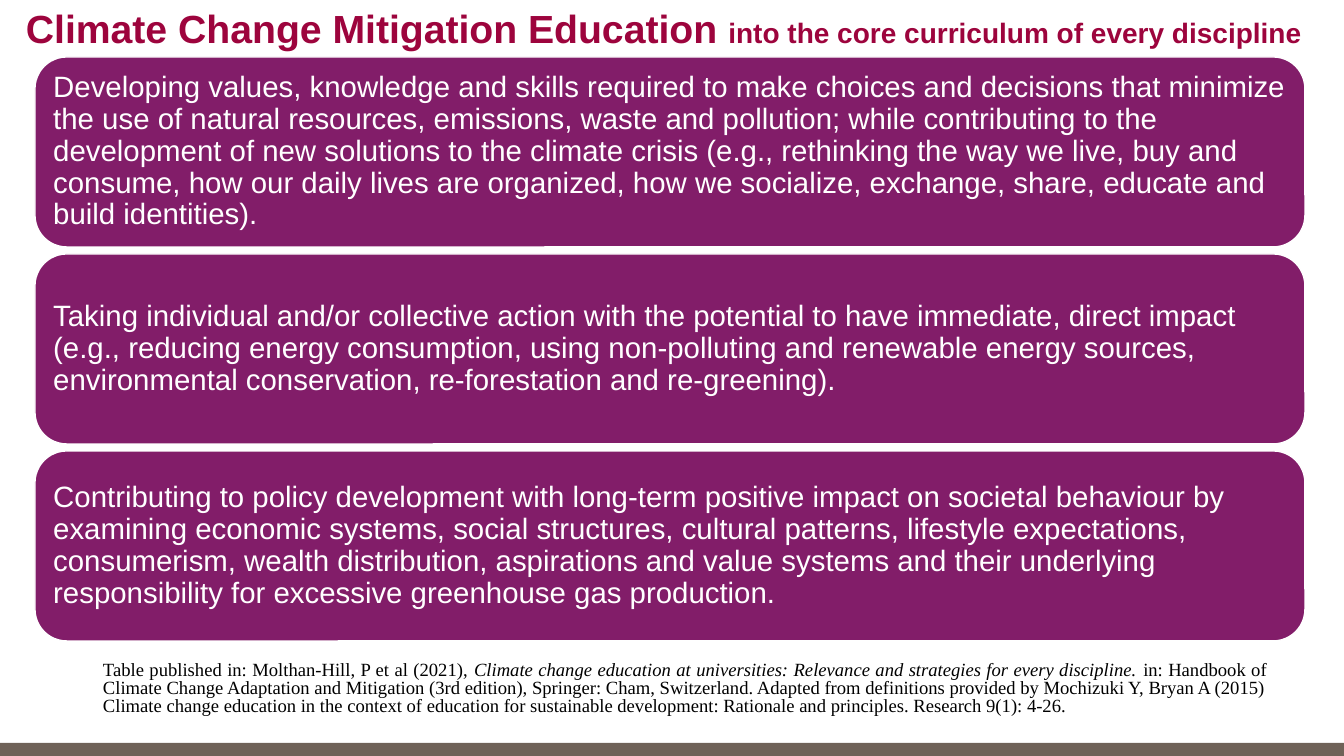
import pptx
import pptx.util
import pptx.dml.color
import pptx.enum.shapes
import pptx.enum.text

RGBColor = pptx.dml.color.RGBColor
ALIGN = pptx.enum.text.PP_ALIGN
ANCHOR = pptx.enum.text.MSO_ANCHOR
SHAPE = pptx.enum.shapes.MSO_SHAPE

CRIMSON = RGBColor(0x9D, 0x04, 0x3D)
PLUM = RGBColor(0x82, 0x1D, 0x69)
BROWN = RGBColor(0x6F, 0x62, 0x58)
WHITE = RGBColor(0xFF, 0xFF, 0xFF)
BLACK = RGBColor(0x00, 0x00, 0x00)

# Content: title runs are (text, size), citation runs are (text, italic)
TITLE = [
    ("Climate Change Mitigation Education ", 28),
    ("into the core curriculum of every discipline", 20),
]
DEFINITIONS = [
    "Developing values, knowledge and skills required to make choices and decisions that "
    "minimize the use of natural resources, emissions, waste and pollution; while contributing "
    "to the development of new solutions to the climate crisis (e.g., rethinking the way we "
    "live, buy and consume, how our daily lives are organized, how we socialize, exchange, "
    "share, educate and build identities).",
    "Taking individual and/or collective action with the potential to have immediate, direct "
    "impact (e.g., reducing energy consumption, using non-polluting and renewable energy "
    "sources, environmental conservation, re-forestation and re-greening).",
    "Contributing to policy development with long-term positive impact on societal behaviour "
    "by examining economic systems, social structures, cultural patterns, lifestyle "
    "expectations, consumerism, wealth distribution, aspirations and value systems and their "
    "underlying responsibility for excessive greenhouse gas production.",
]
CITATION = [
    ("Table published in: Molthan-Hill, P et al (2021), ", False),
    ("Climate change education at universities: Relevance and strategies for every "
     "discipline.", True),
    (" in: Handbook of Climate Change Adaptation and Mitigation (3rd edition), Springer: Cham, "
     "Switzerland. Adapted from definitions provided by Mochizuki Y, Bryan A (2015) Climate "
     "change education in the context of education for sustainable development: Rationale and "
     "principles. Research 9(1): 4-26.", False),
]

# Layout in px
SLIDE_WIDTH, SLIDE_HEIGHT = 1344, 756
CARD_LEFT, CARD_TOP, CARD_WIDTH, CARD_HEIGHT, CARD_GAP = 35, 57, 1270, 190, 7
CARD_MARGIN = 9
BAR_HEIGHT = 13


def px(length):
    return pptx.util.Emu(round(length * 914400 / 100.8))


def box(*lengths):
    return [px(length) for length in lengths]


def set_margins(frame, margin):
    frame.margin_left = frame.margin_right = px(margin)
    frame.margin_top = frame.margin_bottom = px(margin)


def format_run(run, name, size, color, bold=False, italic=False):
    run.font.name = name
    run.font.size = pptx.util.Pt(size)
    run.font.color.rgb = color
    run.font.bold = bold
    run.font.italic = italic


def add_filled_shape(slide, kind, bounds, color):
    shape = slide.shapes.add_shape(kind, *box(*bounds))
    shape.shadow.inherit = False
    shape.fill.solid()
    shape.fill.fore_color.rgb = color
    shape.line.fill.background()
    return shape


def add_title(slide):
    title = slide.shapes.title
    title.left, title.top, title.width, title.height = box(-15, -1, 1358, 57)
    frame = title.text_frame
    frame.auto_size = pptx.enum.text.MSO_AUTO_SIZE.NONE
    frame.vertical_anchor = ANCHOR.TOP
    paragraph = frame.paragraphs[0]
    paragraph.alignment = ALIGN.CENTER
    for text, size in TITLE:
        run = paragraph.add_run()
        run.text = text
        format_run(run, "Arial", size, CRIMSON, bold=True)


def add_card(slide, index, definition):
    top = CARD_TOP + index * (CARD_HEIGHT + CARD_GAP)
    bounds = (CARD_LEFT, top, CARD_WIDTH, CARD_HEIGHT)
    card = add_filled_shape(slide, SHAPE.ROUNDED_RECTANGLE, bounds, PLUM)
    card.line.color.rgb = WHITE
    card.line.width = pptx.util.Pt(1)
    frame = card.text_frame
    frame.word_wrap = True
    frame.vertical_anchor = ANCHOR.MIDDLE
    set_margins(frame, CARD_MARGIN)
    frame.text = definition
    paragraph = frame.paragraphs[0]
    paragraph.alignment = ALIGN.LEFT
    paragraph.line_spacing = 0.9
    format_run(paragraph.runs[0], "Arial", 21, WHITE)


def add_citation(slide):
    frame = slide.shapes.add_textbox(*box(103, 641, 1164, 75)).text_frame
    frame.word_wrap = True
    frame.vertical_anchor = ANCHOR.BOTTOM
    set_margins(frame, 0)
    paragraph = frame.paragraphs[0]
    paragraph.alignment = ALIGN.JUSTIFY
    paragraph.line_spacing = 0.8
    for text, italic in CITATION:
        run = paragraph.add_run()
        run.text = text
        format_run(run, "Times New Roman", 13.3, BLACK, italic=italic)


def main():
    presentation = pptx.Presentation()
    presentation.slide_width, presentation.slide_height = box(SLIDE_WIDTH, SLIDE_HEIGHT)
    slide = presentation.slides.add_slide(presentation.slide_layouts[5])  # title only

    # Bottom bar
    bar_bounds = (0, SLIDE_HEIGHT - BAR_HEIGHT, SLIDE_WIDTH, BAR_HEIGHT)
    add_filled_shape(slide, SHAPE.RECTANGLE, bar_bounds, BROWN)

    # Title, definition cards and citation
    add_title(slide)
    for index, definition in enumerate(DEFINITIONS):
        add_card(slide, index, definition)
    add_citation(slide)

    presentation.save("out.pptx")


if __name__ == "__main__":
    main()
